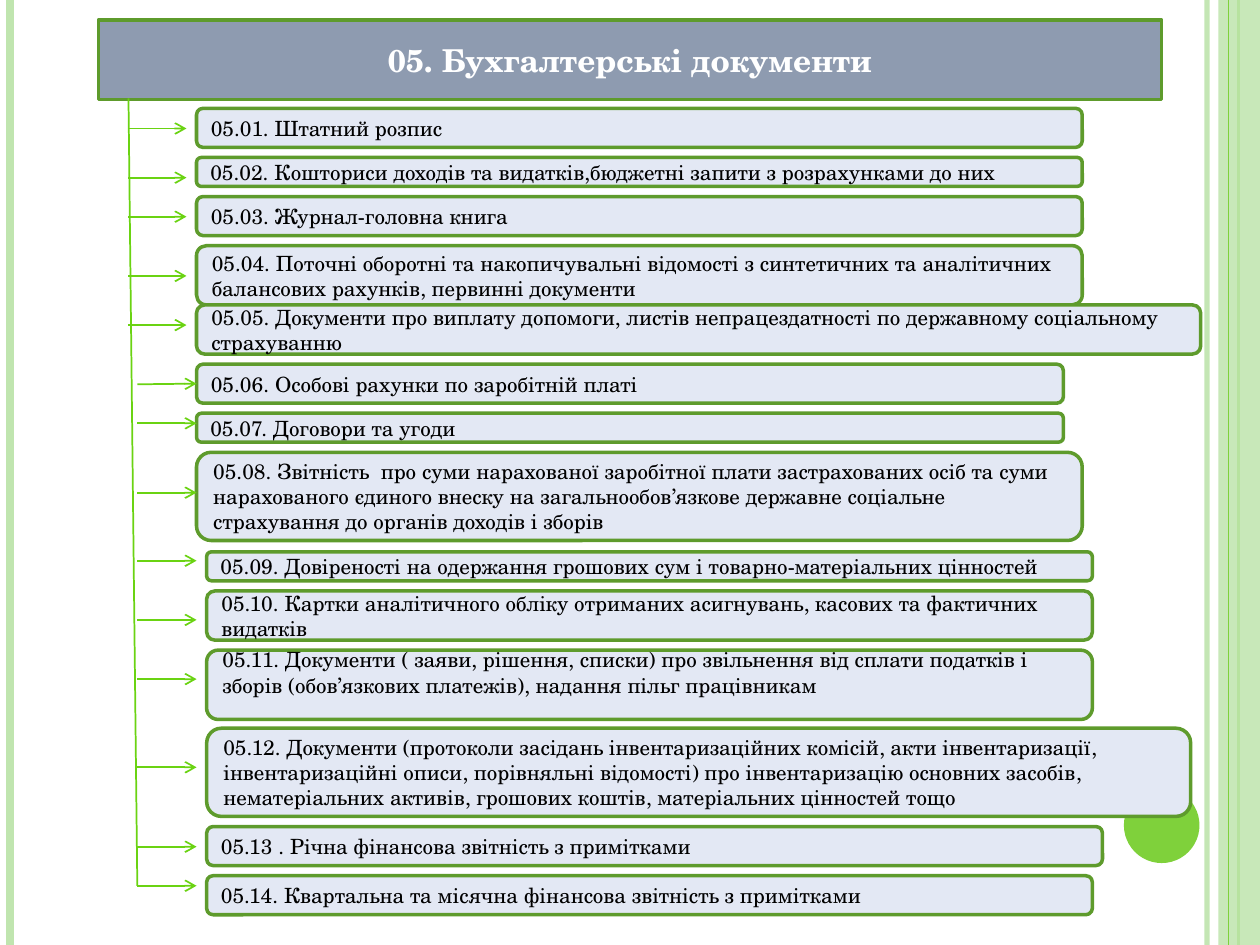
from lxml import etree
from pptx import Presentation
from pptx.dml.color import RGBColor
from pptx.enum import shapes, text
from pptx.oxml.ns import qn
from pptx.util import Inches, Pt

FONT = "TeX Gyre Schola"
PALE, GREEN, ARROW, BORDER = "C0E5AF", "7FD13B", "6AD312", "5E9B2C"


def paint(fmt, color, alpha=None):
    """Give a fill a solid hex colour, with opacity in percent if wanted."""
    fmt.solid()
    fmt.fore_color.rgb = RGBColor.from_string(color)
    if alpha:
        clr = fmt._xPr.find(".//" + qn("a:srgbClr"))
        etree.SubElement(clr, qn("a:alpha"), val=str(alpha * 1000))


def add_line(x1, y1, x2, y2, color, width, alpha=None, arrow=False):
    c = s.shapes.add_connector(shapes.MSO_CONNECTOR.STRAIGHT,
                               Inches(x1), Inches(y1), Inches(x2), Inches(y2))
    paint(c.line.fill, color, alpha)
    c.line.width = Pt(width)
    if arrow:
        etree.SubElement(c.line._get_or_add_ln(), qn("a:tailEnd"), type="arrow")
    etree.SubElement(c._element.spPr, qn("a:effectLst"))
    return c


prs = Presentation()
prs.slide_width, prs.slide_height = Inches(10), Inches(7.5)
s = prs.slides.add_slide(prs.slide_layouts[5])

# Side stripes and corner disc
for x, color, width, alpha in [(9.58, PALE, 3, 93), (0.08, PALE, 4.5, None),
                               (9.83, GREEN, 1.5, None)]:
    add_line(x, 0, x, 7.5, color, width, alpha)
band = s.shapes.add_shape(shapes.MSO_SHAPE.RECTANGLE,
                          Inches(9.67), 0, Inches(0.33), Inches(7.5))
paint(band.fill, PALE, 87)
add_line(9.75, 0, 9.75, 7.5, GREEN, 0.75)
disc = s.shapes.add_shape(shapes.MSO_SHAPE.OVAL,
                          Inches(8.92), Inches(6.25), Inches(0.6), Inches(0.6))
paint(disc.fill, GREEN)
for sp in (band, disc):
    sp.line.fill.background()
    sp.shadow.inherit = False

# Title
title = s.shapes.title
title.left, title.top = Inches(0.78), Inches(0.16)
title.width, title.height = Inches(8.44), Inches(0.63)
paint(title.fill, "8E9BB0")
paint(title.line.fill, BORDER)
title.line.width = Pt(2)
tf = title.text_frame
tf.vertical_anchor = text.MSO_ANCHOR.MIDDLE
p = tf.paragraphs[0]
p.alignment = text.PP_ALIGN.CENTER
r = p.add_run()
r.text = "05. Бухгалтерські документи"
r.font.name, r.font.size, r.font.bold = FONT, Pt(18), True
paint(r.font.fill, "FFFFFF")

# Trunk from the title down to the last item
add_line(1.02, 0.78, 1.09, 7.03, ARROW, 1)

# Items: left, top, width, height, arrow start, arrow height, wording
items = [
    (1.56, 0.86, 7.03, 0.31, 1.02, 1.02, "05.01. Штатний розпис"),
    (1.56, 1.25, 7.03, 0.23, 1.02, 1.41,
     "05.02. Кошториси доходів та видатків,бюджетні запити з розрахунками до них"),
    (1.56, 1.56, 7.03, 0.31, 1.02, 1.72, "05.03. Журнал-головна книга"),
    (1.56, 1.95, 7.03, 0.47, 1.02, 2.19,
     "05.04. Поточні оборотні та накопичувальні відомості з синтетичних та "
     "аналітичних балансових рахунків, первинні документи"),
    (1.56, 2.42, 7.97, 0.39, 1.02, 2.58,
     "05.05. Документи про виплату допомоги, листів непрацездатності по "
     "державному соціальному страхуванню"),
    (1.56, 2.89, 6.88, 0.31, 1.09, 3.05,
     "05.06. Особові рахунки по заробітній платі"),
    (1.56, 3.28, 6.88, 0.23, 1.09, 3.36, "05.07. Договори та угоди"),
    (1.56, 3.59, 7.03, 0.7, 1.09, 3.91,
     "05.08. Звітність  про суми нарахованої заробітної плати застрахованих "
     "осіб та суми нарахованого єдиного внеску на загальнообов’язкове державне "
     "соціальне страхування до органів доходів і зборів"),
    (1.64, 4.38, 7.03, 0.23, 1.09, 4.45,
     "05.09. Довіреності на одержання грошових сум і товарно-матеріальних цінностей"),
    (1.64, 4.69, 7.03, 0.39, 1.09, 4.92,
     "05.10. Картки аналітичного обліку отриманих асигнувань, касових та "
     "фактичних видатків"),
    (1.64, 5.16, 7.03, 0.55, 1.09, 5.39,
     "05.11. Документи ( заяви, рішення, списки) про звільнення від сплати "
     "податків і зборів (обов’язкових платежів), надання пільг працівникам"),
    (1.64, 5.78, 7.81, 0.7, 1.09, 6.09,
     "05.12. Документи (протоколи засідань інвентаризаційних комісій, акти "
     "інвентаризації, інвентаризаційні описи, порівняльні відомості) про "
     "інвентаризацію основних засобів, нематеріальних активів, грошових коштів, "
     "матеріальних цінностей тощо"),
    (1.64, 6.56, 7.11, 0.31, 1.09, 6.72,
     "05.13 . Річна фінансова звітність з примітками"),
    (1.64, 6.95, 7.03, 0.31, 1.09, 7.03,
     "05.14. Квартальна та місячна фінансова звітність з примітками"),
]
for left, top, width, height, start, y, wording in items:
    sp = s.shapes.add_shape(shapes.MSO_SHAPE.ROUNDED_RECTANGLE, Inches(left),
                            Inches(top), Inches(width), Inches(height))
    sp.shadow.inherit = False
    paint(sp.fill, "E3E8F4")
    paint(sp.line.fill, BORDER)
    sp.line.width = Pt(2)
    tf = sp.text_frame
    tf.word_wrap = True
    tf.vertical_anchor = text.MSO_ANCHOR.MIDDLE
    if wording.startswith("05.11"):
        tf.margin_bottom = Inches(0.25)  # text sits high in this box
    p = tf.paragraphs[0]
    p.alignment = text.PP_ALIGN.LEFT
    r = p.add_run()
    r.text = wording
    r.font.name, r.font.size = FONT, Pt(12)
    paint(r.font.fill, "000000")

    end = 1.48 if start == 1.02 else 1.56
    arrow = add_line(start, y, end, y, ARROW, 1, arrow=True)
    if end == left and abs(top + height / 2 - y) < 0.01:
        arrow.end_connect(sp, 1)

prs.save("out.pptx")
